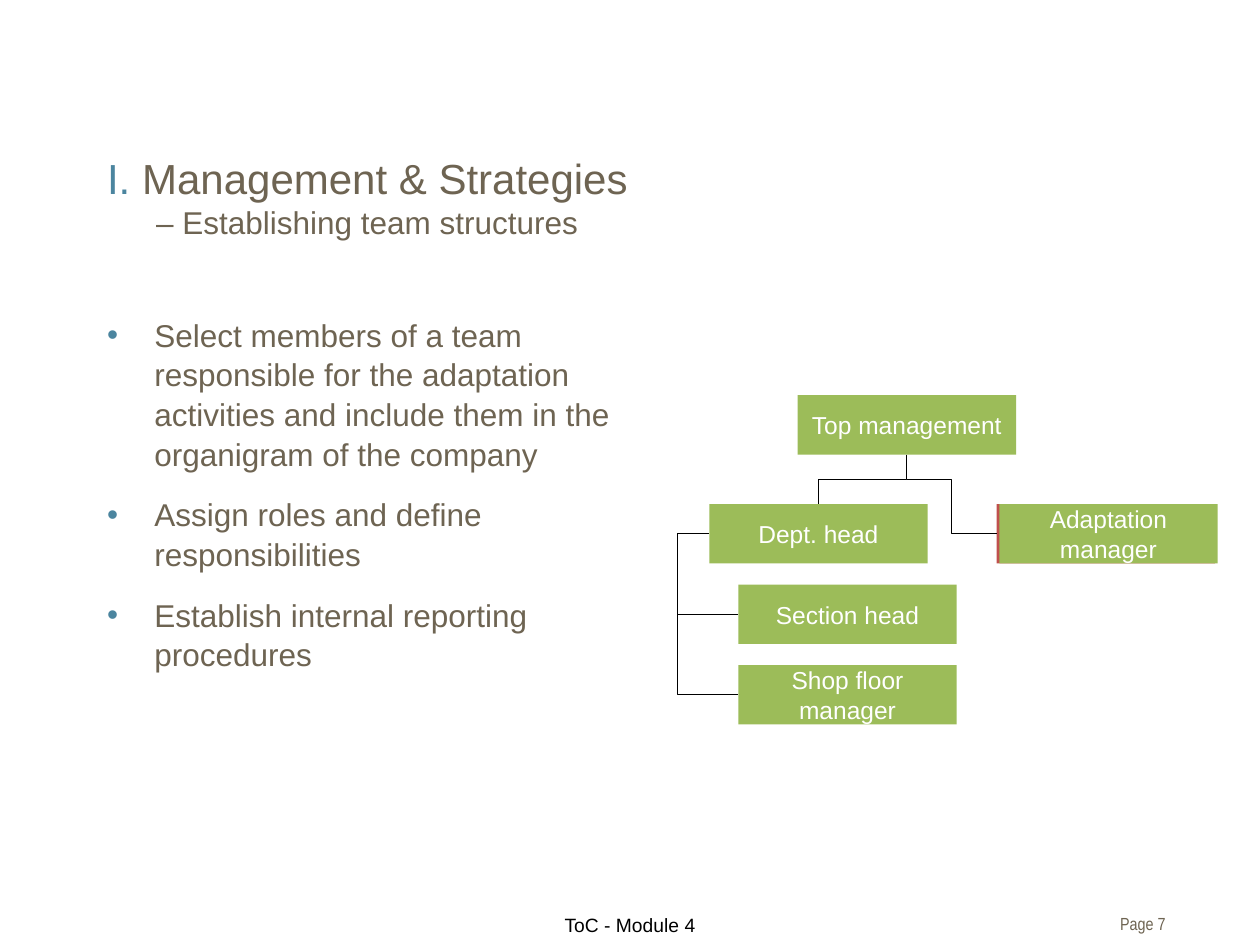
from dataclasses import dataclass

from lxml.etree import SubElement
from pptx import Presentation
from pptx.dml.color import RGBColor
from pptx.enum.shapes import MSO_CONNECTOR, MSO_SHAPE
from pptx.enum.text import MSO_ANCHOR, MSO_AUTO_SIZE, PP_ALIGN
from pptx.oxml.ns import qn
from pptx.util import Pt


@dataclass(frozen=True)
class Theme:
    font: str = "Arial"
    narrow_font: str = "Arial Narrow"
    text: str = "6E6452"
    accent: str = "4B859F"
    box: str = "9CBC59"
    edge: str = "C0504D"
    black: str = "000000"
    white: str = "FFFFFF"
    title_size: float = 24
    body_size: float = 18
    box_size: float = 14
    footer_size: float = 11
    page_size: float = 10


THEME = Theme()
BOX_WIDTH, BOX_HEIGHT = 124.8, 34
LEVEL_TOP = 288
STAFF_GAP = 46


def add_run(paragraph, text, size, color, font=THEME.font):
    run = paragraph.add_run()
    run.text = text
    run.font.size = Pt(size)
    run.font.name = font
    run.font.color.rgb = RGBColor.from_string(color)


def place(shape, left, top, width, height):
    shape.left, shape.top = Pt(left), Pt(top)
    shape.width, shape.height = Pt(width), Pt(height)


def set_indent(paragraph, indent):
    """Give the paragraph a hanging indent in points."""
    properties = paragraph._p.get_or_add_pPr()
    properties.set("marL", str(Pt(indent)))
    properties.set("indent", str(-Pt(indent)))
    return properties


def prepare_frame(shape):
    frame = shape.text_frame
    frame.word_wrap = True
    frame.auto_size = MSO_AUTO_SIZE.NONE
    frame.vertical_anchor = MSO_ANCHOR.TOP
    return frame


def fill_title(title):
    place(title, 54, 83.5, 612, 70.5)
    paragraph = prepare_frame(title).paragraphs[0]
    set_indent(paragraph, 28)
    paragraph.alignment = PP_ALIGN.LEFT
    add_run(paragraph, "I. ", THEME.title_size, THEME.accent)
    add_run(paragraph, "Management & Strategies", THEME.title_size, THEME.text)
    paragraph.add_line_break()
    add_run(paragraph, "– Establishing team structures", THEME.body_size, THEME.text)


def fill_bullets(body, items):
    place(body, 54, 175.7, 333.4, 313.2)
    frame = prepare_frame(body)
    for index, item in enumerate(items):
        paragraph = frame.add_paragraph() if index else frame.paragraphs[0]
        properties = set_indent(paragraph, 27)
        color = SubElement(properties, qn("a:buClr"))
        SubElement(color, qn("a:srgbClr"), val=THEME.accent)
        SubElement(properties, qn("a:buFont"), typeface=THEME.font)
        SubElement(properties, qn("a:buChar"), char="•")
        paragraph.alignment = PP_ALIGN.LEFT
        paragraph.line_spacing = 1.05
        paragraph.space_before = Pt(4 if index else 0)
        paragraph.space_after = Pt(8)
        add_run(paragraph, item, THEME.body_size, THEME.text)


def add_box(slide, left, top, color=THEME.box, text=None):
    shape = slide.shapes.add_shape(
        MSO_SHAPE.RECTANGLE, Pt(left), Pt(top), Pt(BOX_WIDTH), Pt(BOX_HEIGHT))
    shape.shadow.inherit = False
    shape.fill.solid()
    shape.fill.fore_color.rgb = RGBColor.from_string(color)
    shape.line.fill.background()
    if text:
        frame = prepare_frame(shape)
        frame.vertical_anchor = MSO_ANCHOR.MIDDLE
        frame.margin_left = frame.margin_right = Pt(4)
        frame.margin_top = frame.margin_bottom = 0
        paragraph = frame.paragraphs[0]
        paragraph.alignment = PP_ALIGN.CENTER
        add_run(paragraph, text, THEME.box_size, THEME.white)


def add_elbow(slide, start, end, vertical=False, bend=0.5):
    """Bend a line from start to an end further left; vertical lines leave downwards."""
    width, height = abs(end[0] - start[0]), abs(end[1] - start[1])
    if vertical:
        width, height = height, width
    left = (start[0] + end[0] - width) / 2
    top = (start[1] + end[1] - height) / 2
    line = slide.shapes.add_connector(
        MSO_CONNECTOR.ELBOW, Pt(left), Pt(top), Pt(left + width), Pt(top + height))
    line.rotation = 90 if vertical else 180
    line.line.color.rgb = RGBColor.from_string(THEME.black)
    line.line.width = Pt(0.5)
    properties = line._element.spPr
    SubElement(properties, qn("a:effectLst"))
    if bend != 0.5:
        adjustments = properties.find(qn("a:prstGeom")).get_or_add_avLst()
        SubElement(adjustments, qn("a:gd"), name="adj1", fmla=f"val {round(bend * 100000)}")


def add_organigram(slide):
    top_left, top_top = 455.8, 225.8
    head_left, staff_left, adaptation_left = 405.3, 421.9, 571
    middle = BOX_HEIGHT / 2
    top_center = top_left + BOX_WIDTH / 2
    top_bottom = top_top + BOX_HEIGHT
    head_side = (head_left, LEVEL_TOP + middle)
    edge_left = adaptation_left - 1.5

    add_box(slide, top_left, top_top, text="Top management")
    add_box(slide, head_left, LEVEL_TOP, text="Dept. head")
    add_box(slide, edge_left, LEVEL_TOP, THEME.edge)
    add_elbow(slide, (top_center, top_bottom),
              (head_left + BOX_WIDTH / 2, LEVEL_TOP), vertical=True)
    add_elbow(slide, (edge_left, LEVEL_TOP + middle),
              (top_center, (top_bottom + LEVEL_TOP) / 2))
    for row, text in enumerate(("Section head", "Shop floor manager"), start=1):
        top = LEVEL_TOP + row * STAFF_GAP
        add_elbow(slide, (staff_left, top + middle), head_side, bend=2.1)
        add_box(slide, staff_left, top, text=text)
    add_box(slide, adaptation_left, LEVEL_TOP, text="Adaptation manager")


def add_footer(slide, left, width, text, size, color, font, alignment, right_margin):
    box = slide.shapes.add_textbox(Pt(left), Pt(518.4), Pt(width), Pt(19.4))
    frame = prepare_frame(box)
    frame.margin_right = Pt(right_margin)
    paragraph = frame.paragraphs[0]
    paragraph.alignment = alignment
    add_run(paragraph, text, size, color, font)


def main():
    presentation = Presentation()
    presentation.slide_width, presentation.slide_height = Pt(720), Pt(540)
    slide = presentation.slides.add_slide(presentation.slide_layouts[1])
    fill_title(slide.shapes.title)
    fill_bullets(slide.placeholders[1], (
        "Select members of a team responsible for the adaptation activities "
        "and include them in the organigram of the company",
        "Assign roles and define responsibilities",
        "Establish internal reporting procedures",
    ))
    add_organigram(slide)
    add_footer(slide, 225.4, 269.2, "ToC - Module 4", THEME.footer_size,
               THEME.black, THEME.font, PP_ALIGN.CENTER, 7.2)
    add_footer(slide, 593.3, 72.7, "Page 7", THEME.page_size,
               THEME.text, THEME.narrow_font, PP_ALIGN.RIGHT, 0)
    presentation.save("out.pptx")


if __name__ == "__main__":
    main()
